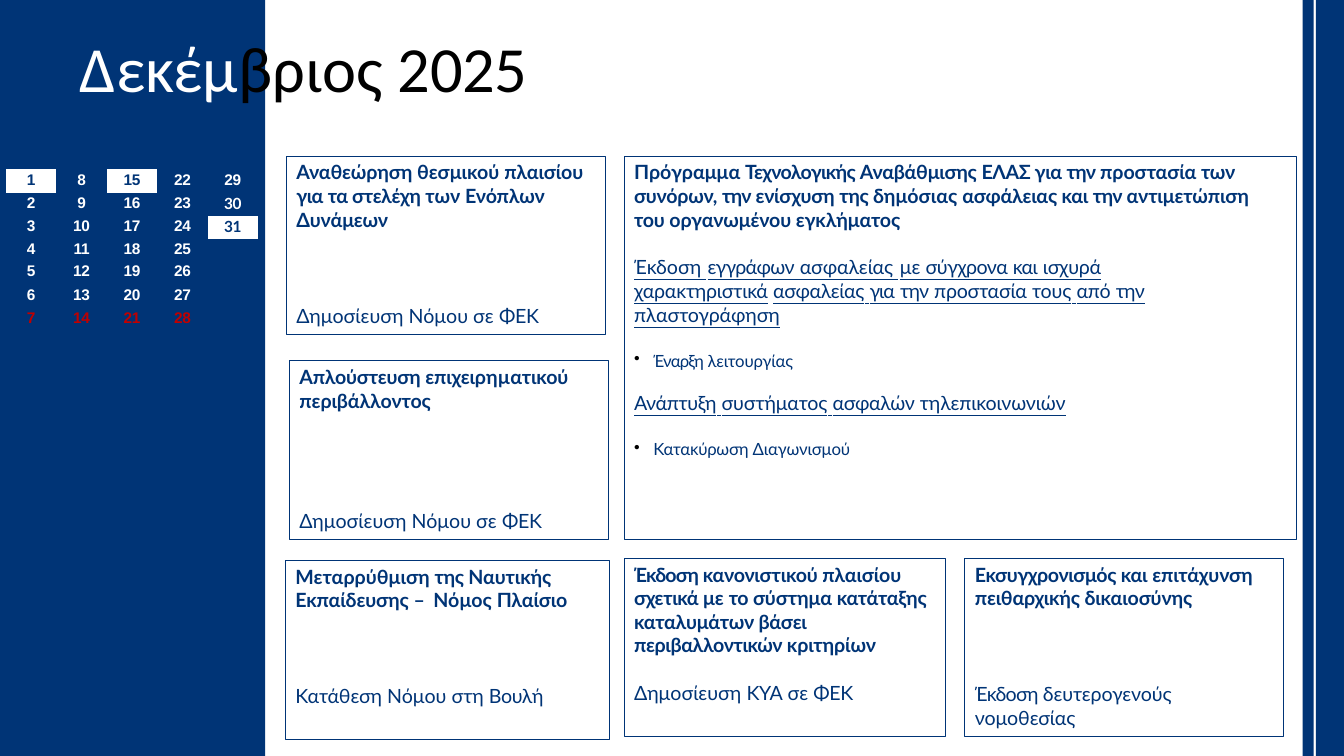
from lxml import etree
from pptx import Presentation
from pptx.dml.color import RGBColor
from pptx.enum.shapes import MSO_CONNECTOR, MSO_SHAPE
from pptx.enum.text import MSO_ANCHOR, PP_ALIGN
from pptx.oxml.ns import qn
from pptx.util import Inches, Pt

RECTANGLE = MSO_SHAPE.RECTANGLE
STRAIGHT = MSO_CONNECTOR.STRAIGHT
CENTER, LEFT = PP_ALIGN.CENTER, PP_ALIGN.LEFT
TOP, MIDDLE = MSO_ANCHOR.TOP, MSO_ANCHOR.MIDDLE

THEME = {
    "navy": RGBColor(0x00, 0x34, 0x76),
    "white": RGBColor(0xFF, 0xFF, 0xFF),
    "black": RGBColor(0, 0, 0),
    "red": RGBColor(0xC0, 0, 0),
    "title": 46, "body": 14, "bullet": 12, "day": 11,
    "title_font": "Calibri", "body_font": "Lato", "day_font": "Arial",
}
NO_STYLE = "{2D5ABB26-0587-4C30-8999-92F81FD0307C}"


def add_span(para, text, size, font, color, bold=False, spacing=0.0, underline=False):
    span = para.add_run()
    span.text = text
    span.font.size = Pt(size)
    span.font.name = font
    span.font.color.rgb = color
    span.font.bold = bold
    if underline:
        span.font.underline = True
    span.font._element.set("spc", str(round(spacing * 100)))


def add_block(page, left, top, width, height, filled):
    block = page.shapes.add_shape(RECTANGLE, Inches(left), Inches(top), Inches(width), Inches(height))
    block.shadow.inherit = False
    if filled:
        block.fill.solid()
        block.fill.fore_color.rgb = THEME["navy"]
        block.line.fill.background()
    else:
        block.fill.background()
        block.line.color.rgb = THEME["navy"]
        block.line.width = Pt(0.75)
    return block


deck = Presentation()
deck.slide_width, deck.slide_height = Inches(13.33), Inches(7.5)
page = deck.slides.add_slide(deck.slide_layouts[6])

for left, width in [(0, 2.63), (12.92, 0.11), (13.05, 0.28)]:
    add_block(page, left, 0, width, 7.5, True)

calendar = page.shapes.add_table(7, 5, Inches(0.06), Inches(1.68), Inches(2.5), Inches(1.58)).table
calendar.first_row = False
calendar.horz_banding = False
calendar._tbl.tblPr.find(qn("a:tableStyleId")).text = NO_STYLE
for column in calendar.columns:
    column.width = Inches(0.5)
for row in range(7):
    calendar.rows[row].height = Inches(0.2 if row == 6 else 0.23)
    for column in range(5):
        day = column * 7 + row + 1
        marked = day in (1, 15, 31)
        cell = calendar.cell(row, column)
        cell.margin_left = cell.margin_right = cell.margin_bottom = 0
        cell.margin_top = Inches(0.02 if row < 4 else 0.01)
        cell.fill.solid()
        cell.fill.fore_color.rgb = THEME["white" if marked else "navy"]
        para = cell.text_frame.paragraphs[0]
        para.alignment = CENTER
        para.space_before = Pt(1.4 if row < 4 else 1.1)
        if row == 6:
            para.line_spacing = Pt(12.3)
        if day <= 31:
            color = "navy" if marked else "red" if row == 6 else "white"
            font = "body_font" if day >= 30 else "day_font"
            add_span(para, str(day), THEME["day"], THEME[font], THEME[color], True,
                     -0.5 if day < 8 else -0.2)
        else:
            para._p.get_or_add_endParaRPr().set("sz", str(THEME["day"] * 100))

rule = page.shapes.add_connector(STRAIGHT, Inches(2.06), Inches(2.59), Inches(2.56), Inches(2.59))
rule.line.color.rgb = THEME["navy"]
rule.line.width = Pt(1)
etree.SubElement(rule._element.spPr, qn("a:effectLst"))

title = page.shapes.add_textbox(Inches(0.79), Inches(0.26), Inches(5.11), Inches(0.79)).text_frame
title.word_wrap = True
title.vertical_anchor = MIDDLE
title.margin_left = title.margin_right = title.margin_bottom = 0
title.margin_top = Inches(0.01)
title.paragraphs[0].space_before = Pt(0.9)
for text, color, spacing in [("Δεκέμ", "white", 0), ("βριος ", "black", 0), ("2025", "black", -0.2)]:
    add_span(title.paragraphs[0], text, THEME["title"], THEME["title_font"], THEME[color], spacing=spacing)

LAW = [("Δημοσίευση Νόμου σε ", 0), ("ΦΕΚ", -0.2)]
CARDS = [
    (2.87, 3.58, 3.17, 1.77, [
        ("head", 2.6, [("Απλούστευση ", -0.2), ("επιχειρηµατικού περιβάλλοντος", -0.1)]),
        ("plain", 69.6, LAW)]),
    (2.84, 1.55, 3.17, 1.77, [
        ("head", 2.5, [("Αναθεώρηση ", -0.1), ("θεσμικού ", 0), ("πλαισίου", -0.1)]),
        ("head", 0, [("για ", -0.4), ("τα στελέχη ", -0.3), ("των ", 0), ("Ενόπλων", -0.1)]),
        ("head", 0.1, [("Δυνάμεων", -0.1)]),
        ("plain", 52, LAW)]),
    (6.19, 1.55, 6.67, 3.8, [
        ("head", 2.5, [("Πρόγραμμα ", 0), ("Τεχνολογικής ", -0.5), ("Αναβάθμισης ", -0.2),
                       ("ΕΛΑΣ για ", -0.3), ("την ", -0.5), ("προστασία ", -0.1), ("των", -0.2)]),
        ("head", 0, [("συνόρων, ", -0.2), ("την ", -0.5), ("ενίσχυση ", -0.2), ("της ", -0.3),
                     ("δημόσιας ", 0), ("ασφάλειας και ", -0.2), ("την ", -0.5), ("αντιμετώπιση", -0.1)]),
        ("head", 0.1, [("του ", -0.2), ("οργανωμένου εγκλήματος", -0.1)]),
        ("link", 17.4, [
            ("Έκδοση", 0), (" ", 0.8), ("εγγράφων", -0.5), (" ", -1.4), ("ασφαλείας", -0.1), (" ", 1.1),
            ("με", 0), (" ", -1.4), ("σύγχρονα", -0.4), (" ", -1.4), ("και", -0.5), (" ", -1.4),
            ("ισχυρά", -0.2), (" ", -1.6), ("χαρακτηριστικά", -0.2), (" ", -0.2), ("ασφαλείας", -0.3),
            (" ", -1.3), ("για", -0.7), (" ", -1.1), ("την", -0.5), (" ", -0.8), ("προστασία", -0.2),
            (" ", -1.4), ("τους", -0.1), (" ", -1.1), ("από", -0.2), (" ", -1.1), ("την", -0.5),
            (" ", -1), ("πλαστογράφηση", -0.1)]),
        ("bullet", 17.4, [("Έναρξη ", -0.6), ("λειτουργίας", -0.1)]),
        ("link", 14.8, [("Ανάπτυξη", -0.3), (" ", -1.1), ("συστήματος", -0.1), (" ", -0.9),
                        ("ασφαλών", -0.3), (" ", -0.9), ("τηλεπικοινωνιών", -0.1)]),
        ("bullet", 17.5, [("Κατακύρωση ", -0.2), ("Διαγωνισμού", -0.1)])]),
    (6.19, 5.54, 3.19, 1.77, [
        ("head", 2.6, [("Έκδοση ", -0.6), ("κανονιστικού ", -0.2), ("πλαισίου ", -0.1), ("σχετικά ", -0.3),
                       ("με ", 0), ("το ", -0.3), ("σύστημα ", -0.1), ("κατάταξης καταλυμάτων βάσει", -0.2)]),
        ("head", 0, [("περιβαλλοντικών ", -0.3), ("κριτηρίων", -0.1)]),
        ("plain", 17.4, [("Δημοσίευση ", 0), ("ΚΥΑ ", -0.3), ("σε ", 0), ("ΦΕΚ", -0.2)])]),
    (9.57, 5.54, 3.16, 1.77, [
        ("head", 2.6, [("Εκσυγχρονισμός ", -0.3), ("και ", -0.2), ("επιτάχυνση ", -0.1),
                       ("πειθαρχικής ", -0.2), ("δικαιοσύνης", -0.1)]),
        ("plain", 52, [("Έκδοση ", -0.5), ("δευτερογενούς", -0.1)]),
        ("plain", 0, [("νομοθεσίας", -0.1)])]),
    (2.83, 5.56, 3.22, 1.78, [
        ("head", 2.6, [("Μεταρρύθμιση ", 0), ("της ", -0.3), ("Ναυτικής", -0.1)]),
        ("head", 0, [("Εκπαίδευσης ", -0.1), ("– ", 1.3), ("Νόμος ", 0), ("Πλαίσιο", -0.1)]),
        ("plain", 52, [("Κατάθεση ", -0.1), ("Νόμου ", 0), ("στη ", -0.1), ("Βουλή", -0.2)])]),
]

for left, top, width, height, lines in CARDS:
    frame = add_block(page, left, top, width, height, False).text_frame
    frame.word_wrap = True
    frame.vertical_anchor = TOP
    frame.margin_left = frame.margin_right = frame.margin_bottom = 0
    frame.margin_top = Inches(0.04)
    for index, (kind, gap, spans) in enumerate(lines):
        para = frame.add_paragraph() if index else frame.paragraphs[0]
        para.alignment = LEFT
        para.space_before = Pt(gap)
        bullet = kind == "bullet"
        properties = para._p.get_or_add_pPr()
        properties.set("marL", str(Inches(0.29 if bullet else 0.1)))
        properties.set("indent", str(Inches(-0.19 if bullet else 0)))
        if kind == "link":
            properties.set("marR", str(Inches(1)))
        if bullet:
            tint = etree.SubElement(properties, qn("a:buClr"))
            etree.SubElement(tint, qn("a:srgbClr")).set("val", str(THEME["black"]))
            etree.SubElement(properties, qn("a:buChar")).set("char", "•")
        previous = ""
        for text, spacing in spans:
            underline = kind == "link" and not (text == " " and previous == "χαρακτηριστικά")
            add_span(para, text, THEME["bullet" if bullet else "body"], THEME["body_font"],
                     THEME["navy"], kind == "head", spacing, underline)
            previous = text

deck.save("out.pptx")
